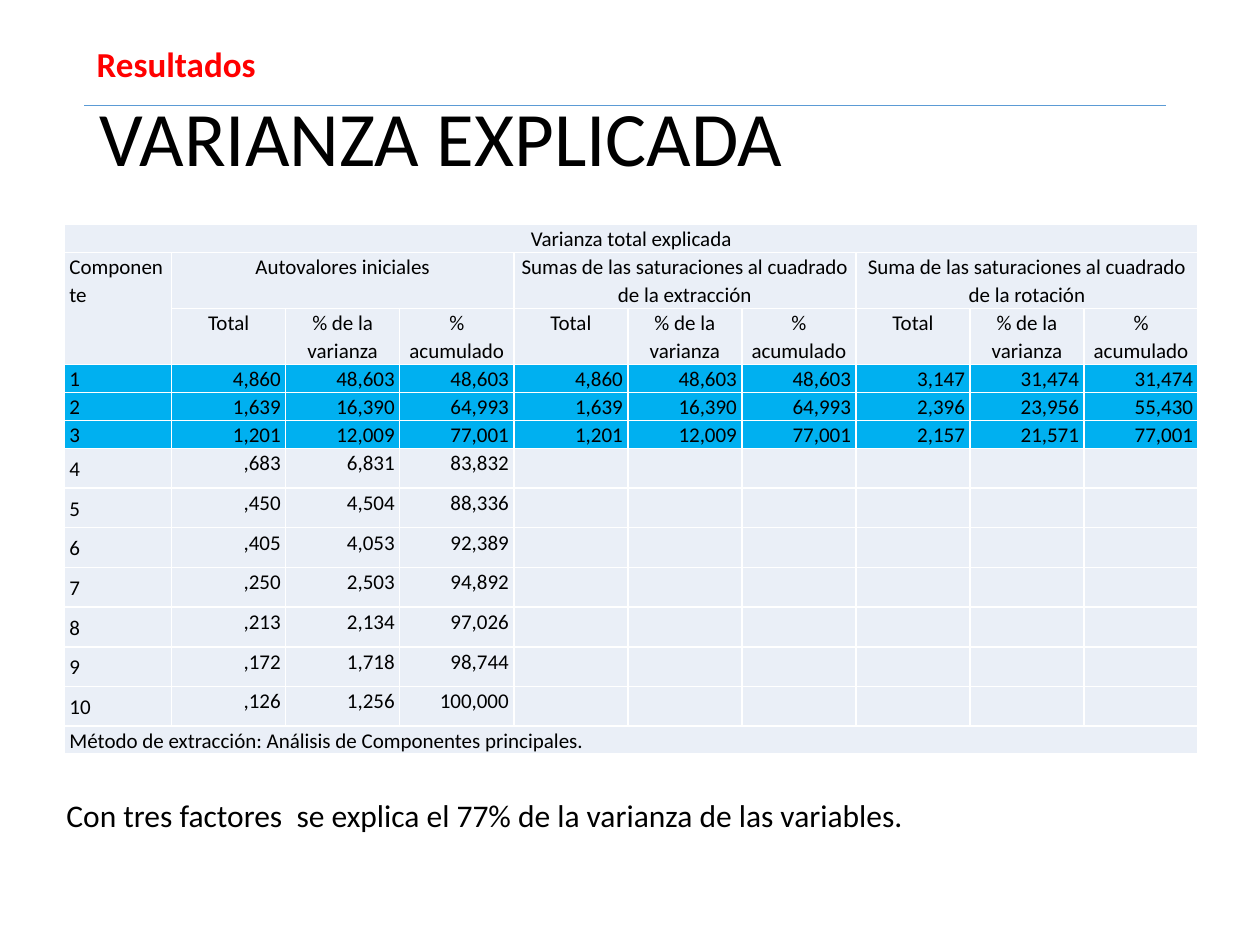
from pptx import Presentation
from pptx.dml.color import RGBColor
from pptx.enum.shapes import MSO_CONNECTOR
from pptx.enum.text import MSO_ANCHOR, MSO_AUTO_SIZE, PP_ALIGN
from pptx.oxml.ns import qn
from pptx.util import Cm, Pt
from lxml.etree import SubElement

PALE, BLUE = "EAEFF7", "00B0F0"
TOP = "Varianza total explicada"
GROUPS = [
    "Autovalores iniciales",
    "Sumas de las saturaciones al cuadrado de la extracción",
    "Suma de las saturaciones al cuadrado de la rotación",
]
HEADS = ["Total", "% de la varianza", "% acumulado"]
ROWS = [
    ["1", "4,860", "48,603", "48,603", "4,860", "48,603", "48,603", "3,147", "31,474", "31,474"],
    ["2", "1,639", "16,390", "64,993", "1,639", "16,390", "64,993", "2,396", "23,956", "55,430"],
    ["3", "1,201", "12,009", "77,001", "1,201", "12,009", "77,001", "2,157", "21,571", "77,001"],
    ["4", ",683", "6,831", "83,832"],
    ["5", ",450", "4,504", "88,336"],
    ["6", ",405", "4,053", "92,389"],
    ["7", ",250", "2,503", "94,892"],
    ["8", ",213", "2,134", "97,026"],
    ["9", ",172", "1,718", "98,744"],
    ["10", ",126", "1,256", "100,000"],
]
METHOD = "Método de extracción: Análisis de Componentes principales."
NOTE = "Con tres factores  se explica el 77% de la varianza de las variables."


def color(code):
    """Turn a hex string into a colour."""
    return RGBColor.from_string(code)


def style(para, size, code="000000", bold=False, align=PP_ALIGN.LEFT):
    """Format one paragraph."""
    font = para.font
    font.name, font.size, font.bold = "Calibri", Pt(size), bold
    font.color.rgb = color(code)
    para.alignment = align


def add_title(slide, left, top, width, height):
    """Place the slide title."""
    title = slide.shapes.title
    title.left, title.top, title.width, title.height = map(Cm, (left, top, width, height))
    frame = title.text_frame
    frame.text = "VARIANZA EXPLICADA"
    frame.vertical_anchor = MSO_ANCHOR.MIDDLE
    style(frame.paragraphs[0], 44)
    frame.paragraphs[0].line_spacing = 0.9


def add_text(slide, text, left, top, width, height, wrap=True, **look):
    """Place a text box with one paragraph."""
    frame = slide.shapes.add_textbox(Cm(left), Cm(top), Cm(width), Cm(height)).text_frame
    frame.word_wrap = wrap
    frame.auto_size = MSO_AUTO_SIZE.SHAPE_TO_FIT_TEXT
    frame.text = text
    style(frame.paragraphs[0], **look)


def add_header(slide, left, top, width):
    """Place the section label and the rule below it."""
    add_text(slide, "Resultados", left, top, 3.73, 1.12, wrap=False,
             size=20, code="FF0000", bold=True)
    level = Cm(top + 1.39)
    rule = slide.shapes.add_connector(
        MSO_CONNECTOR.STRAIGHT, Cm(left + width), level, Cm(left), level)
    rule.line.color.rgb = color("5B9BD5")
    rule.line.width = Pt(0.5)
    SubElement(rule._element.spPr, qn("a:effectLst"))


def write(cell, text, align=PP_ALIGN.LEFT, anchor=MSO_ANCHOR.TOP):
    """Write text into a table cell."""
    cell.text = text
    cell.vertical_anchor = anchor
    para = cell.text_frame.paragraphs[0]
    style(para, 12, align=align)
    para.line_spacing = Pt(16)


def add_table(slide, left, top, width):
    """Place the variance table."""
    first, line, tall = 2.16, 0.56, 0.8
    heights = [line, 2 * line, 2 * line]
    heights += [line if len(row) == 10 else tall for row in ROWS] + [line]
    count, last = len(heights), len(heights) - 1
    grid = slide.shapes.add_table(
        count, 10, Cm(left), Cm(top), Cm(width), Cm(sum(heights))).table
    grid.first_row = grid.horz_banding = False
    for col, column in enumerate(grid.columns):
        column.width = Cm((width - first) / 9 if col else first)
    for row, height in enumerate(heights):
        grid.rows[row].height = Cm(height)
        for cell in grid.rows[row].cells:
            cell.fill.solid()
            cell.fill.fore_color.rgb = color(BLUE if 3 <= row <= 5 else PALE)
            cell.margin_left = cell.margin_right = Cm(0.1)
            cell.margin_top = cell.margin_bottom = 0

    for row in (0, last):
        grid.cell(row, 0).merge(grid.cell(row, 9))
    grid.cell(1, 0).merge(grid.cell(2, 0))
    write(grid.cell(0, 0), TOP, PP_ALIGN.CENTER)
    write(grid.cell(1, 0), "Componente")
    write(grid.cell(last, 0), METHOD, anchor=MSO_ANCHOR.MIDDLE)
    for group, name in enumerate(GROUPS):
        start = 1 + 3 * group
        grid.cell(1, start).merge(grid.cell(1, start + 2))
        write(grid.cell(1, start), name, PP_ALIGN.CENTER)
        for step, head in enumerate(HEADS):
            write(grid.cell(2, start + step), head, PP_ALIGN.CENTER)
    for row, values in enumerate(ROWS, 3):
        write(grid.cell(row, 0), values[0], anchor=MSO_ANCHOR.MIDDLE)
        for col, value in enumerate(values[1:], 1):
            write(grid.cell(row, col), value, PP_ALIGN.RIGHT)


def main():
    """Build and save the slide."""
    deck = Presentation()
    deck.slide_width, deck.slide_height = Cm(25.4), Cm(19.05)
    slide = deck.slides.add_slide(deck.slide_layouts[5])
    add_title(slide, 1.75, 1.02, 21.9, 3.68)
    add_table(slide, 1.3, 4.52, 22.86)
    add_text(slide, NOTE, 1.09, 15.93, 22.81, 1.02, size=18, align=PP_ALIGN.JUSTIFY)
    add_header(slide, 1.7, 0.74, 21.8)
    deck.save("out.pptx")


if __name__ == "__main__":
    main()
